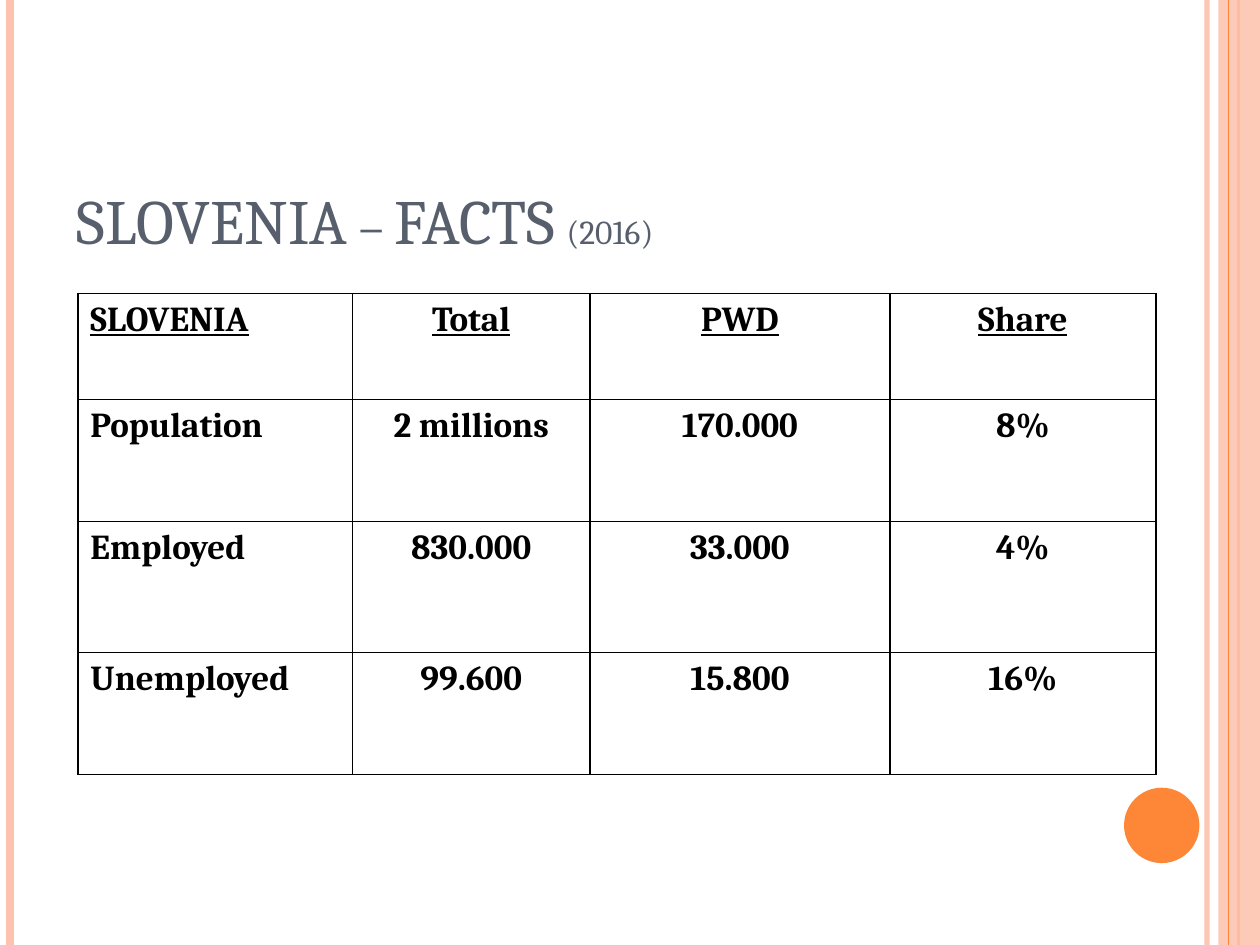
import lxml.etree
import pptx
import pptx.dml.color
import pptx.enum.shapes
import pptx.enum.text
import pptx.oxml.ns
import pptx.util

Cm = pptx.util.Cm
Pt = pptx.util.Pt
RGBColor = pptx.dml.color.RGBColor
Align = pptx.enum.text.PP_ALIGN
Shape = pptx.enum.shapes.MSO_SHAPE
qn = pptx.oxml.ns.qn

ORANGE = RGBColor(0xFE, 0x86, 0x37)
PEACH = RGBColor(0xFE, 0xC3, 0xAE)
SLATE = RGBColor(0x57, 0x5F, 0x6D)
BLACK = RGBColor(0, 0, 0)
FONT = "Cambria"
WIDTH, HEIGHT = Cm(25.4), Cm(19.05)

COLS = [5.54, 4.78, 6.05, 5.36]
ROWS = [2.13, 2.46, 2.64, 2.46]
FACTS = [
    ["SLOVENIA", "Total", "PWD", "Share"],
    ["Population", "2 millions", "170.000", "8%"],
    ["Employed", "830.000", "33.000", "4%"],
    ["Unemployed", "99.600", "15.800", "16%"],
]


def add(parent, tag, **attrs):
    return lxml.etree.SubElement(parent, qn(tag), **attrs)


def fade(fill, alpha):
    """Set the opacity, in percent, of the solid colour below an element."""
    color = next(fill.iter(qn("a:srgbClr")))
    add(color, "a:alpha", val=str(alpha * 1000))


def write(para, text, size, color=BLACK, bold=False, under=False, small=False):
    run = para.add_run()
    run.text = text
    font = run.font
    font.name, font.size, font.bold, font.underline = FONT, Pt(size), bold, under
    font.color.rgb = color
    if small:
        run._r.get_or_add_rPr().set("cap", "small")


def stripe(slide, left, color, width, alpha=None):
    """Draw a vertical line over the full height."""
    line = slide.shapes.add_connector(
        pptx.enum.shapes.MSO_CONNECTOR.STRAIGHT, Cm(left), 0, Cm(left), HEIGHT)
    line.line.color.rgb = color
    line.line.width = Pt(width)
    if alpha:
        fade(line._element.spPr, alpha)
    add(line._element.spPr, "a:effectLst")


def block(slide, kind, left, top, width, height, color, alpha=None):
    shape = slide.shapes.add_shape(kind, left, top, width, height)
    shape.shadow.inherit = False
    shape.fill.solid()
    shape.fill.fore_color.rgb = color
    shape.line.fill.background()
    if alpha:
        fade(shape._element.spPr, alpha)


def title(slide):
    box = slide.shapes.add_textbox(Cm(1.3), Cm(2.92), Cm(22.23), Cm(2.39))
    frame = box.text_frame
    frame.word_wrap = True
    frame.vertical_anchor = pptx.enum.text.MSO_ANCHOR.BOTTOM
    para = frame.paragraphs[0]
    write(para, "SLOVENIA – FACTS ", 36, color=SLATE, small=True)
    write(para, "(2016)", 24, color=SLATE, small=True)


def border(cell):
    props = cell._tc.get_or_add_tcPr()
    for side in ("a:lnL", "a:lnR", "a:lnT", "a:lnB"):
        line = add(props, side, w=str(Pt(1)))
        add(add(line, "a:solidFill"), "a:srgbClr", val=str(BLACK))


def grid(slide):
    frame = slide.shapes.add_table(
        len(ROWS), len(COLS), Cm(1.57), Cm(5.92), Cm(sum(COLS)), Cm(sum(ROWS)))
    table = frame.table
    table.first_row = table.horz_banding = False
    for col, width in zip(table.columns, COLS):
        col.width = Cm(width)
    for row, height in zip(table.rows, ROWS):
        row.height = Cm(height)
    for i, facts in enumerate(FACTS):
        for j, text in enumerate(facts):
            cell = table.cell(i, j)
            border(cell)
            cell.fill.background()
            para = cell.text_frame.paragraphs[0]
            para.alignment = Align.CENTER if j else Align.JUSTIFY
            props = para._p.get_or_add_pPr()
            props.set("marL", str(Cm(1.3)))
            props.set("indent", str(-Cm(1.3)))
            write(para, text, 20, bold=True, under=i == 0)


def main():
    deck = pptx.Presentation()
    deck.slide_width, deck.slide_height = WIDTH, HEIGHT
    slide = deck.slides.add_slide(deck.slide_layouts[6])
    stripe(slide, 24.33, PEACH, 3, alpha=93)
    stripe(slide, 0.2, PEACH, 4.5)
    stripe(slide, 24.97, ORANGE, 1.5)
    block(slide, Shape.RECTANGLE, Cm(24.56), 0, Cm(0.84), HEIGHT, PEACH, alpha=87)
    stripe(slide, 24.77, ORANGE, 0.75)
    block(slide, Shape.OVAL, Cm(22.66), Cm(15.88), Cm(1.52), Cm(1.52), ORANGE)
    title(slide)
    grid(slide)
    deck.save("out.pptx")


if __name__ == "__main__":
    main()
